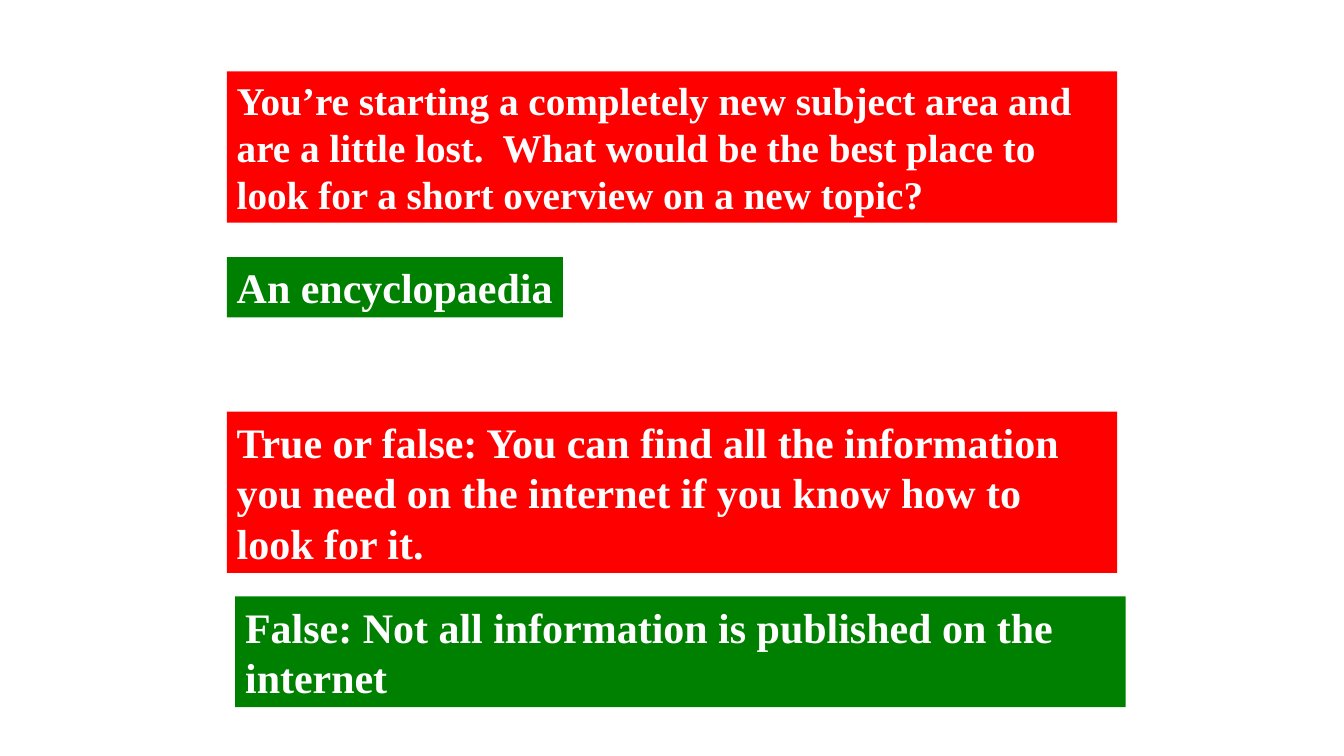
from pptx import Presentation
from pptx.dml.color import RGBColor
from pptx.enum.text import MSO_AUTO_SIZE, MSO_ANCHOR, PP_ALIGN
from pptx.util import Inches, Pt

UNIT = Inches(1 / 12)
COLUMNS, ROWS = 160, 90
MARGIN = 27
FULL_WIDTH = 106
QUESTION, ANSWER = "FF0000", "008000"


def colour(value):
    return RGBColor.from_string(value)


def apply_format(target, values):
    for name, value in values.items():
        setattr(target, name, value)


def add_card(page, text, fill, column, row, columns, rows, size=30, wrap=True):
    box = page.shapes.add_textbox(*(round(part * UNIT) for part in (column, row, columns, rows)))
    box.fill.solid()
    box.fill.fore_color.rgb = colour(fill)
    apply_format(box.text_frame, {
        "word_wrap": wrap,
        "auto_size": MSO_AUTO_SIZE.SHAPE_TO_FIT_TEXT,
        "vertical_anchor": MSO_ANCHOR.TOP,
    })
    para = box.text_frame.paragraphs[0]
    para.alignment = PP_ALIGN.LEFT
    span = para.add_run()
    span.text = text
    apply_format(span.font, {"name": "Times New Roman", "size": Pt(size), "bold": True})
    span.font.color.rgb = colour("FFFFFF")


def main():
    deck = Presentation()
    apply_format(deck, {"slide_width": COLUMNS * UNIT, "slide_height": ROWS * UNIT})
    page = deck.slides.add_slide(deck.slide_layouts[6])
    add_card(page, "You’re starting a completely new subject area and are a little lost.  "
             "What would be the best place to look for a short overview on a new topic?",
             QUESTION, MARGIN, 8.5, FULL_WIDTH, 18, size=28)
    add_card(page, "An encyclopaedia", ANSWER, MARGIN, 30.6, 40, 7.2, wrap=False)
    add_card(page, "True or false: You can find all the information you need "
             "on the internet if you know how to look for it.",
             QUESTION, MARGIN, 49, FULL_WIDTH, 19.2)
    add_card(page, "False: Not all information is published on the internet",
             ANSWER, MARGIN + 1, 71, FULL_WIDTH, 13.2)
    deck.save("out.pptx")


if __name__ == "__main__":
    main()
